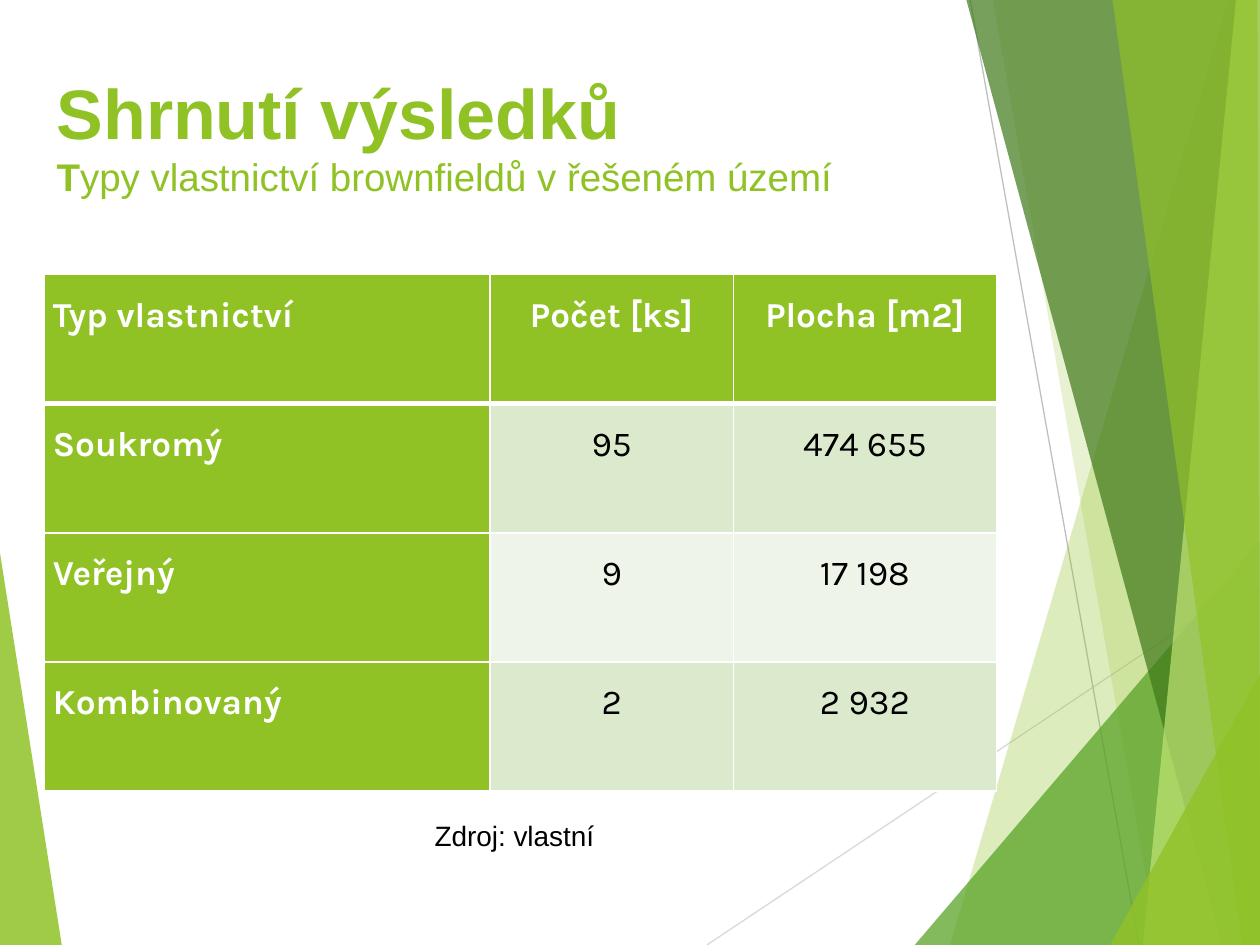
from dataclasses import dataclass

from lxml import etree
from pptx import Presentation
from pptx import util as u
from pptx.dml.color import RGBColor
from pptx.enum import shapes, text
from pptx.oxml import ns

Inches, Pt = u.Inches, u.Pt


@dataclass(frozen=True)
class Theme:
    accent: str = "90C226"
    forest: str = "54A021"
    dark: str = "3F7819"
    lime: str = "C0E474"
    band: str = "DBE9CD"
    band_light: str = "EEF4E8"
    white: str = "FFFFFF"
    black: str = "000000"
    font: str = "Arial"
    table_font: str = "Karla"
    title_size: int = 40
    subtitle_size: int = 22
    table_size: int = 20
    source_size: int = 16


THEME = Theme()

RAYS = [  # colour, opacity in percent, corners
    (THEME.accent, 85, [(0, 4.39), (0.49, 7.5), (0, 7.5)]),
    (THEME.accent, 30, [(9.75, 0), (7.54, 7.5), (10, 7.5), (10, 0)]),
    (THEME.accent, 20, [(7.88, 0), (9.19, 7.5), (10, 7.5), (10, 0)]),
    (THEME.forest, 72, [(7.26, 7.5), (10, 4.29), (10, 7.5)]),
    (THEME.dark, 70, [(7.67, 0), (9.7, 7.5), (10, 7.5), (10, 0)]),
    (THEME.lime, 70, [(9.81, 0), (9.07, 7.5), (10, 7.5), (10, 0)]),
    (THEME.accent, 65, [(8.83, 0), (9.86, 7.5), (10, 7.5), (9.98, 0)]),
    (THEME.accent, 80, [(8.81, 7.5), (10, 5.35), (10, 7.5)]),
]
HAIRLINES = [("D9D9D9", (5.61, 7.5), (10, 4.57)), ("BFBFBF", (7.7, 0), (9.04, 7.5))]
ROWS = [
    ("Typ vlastnictví", "Počet [ks]", "Plocha [m2]"),
    ("Soukromý", "95", "474 655"),
    ("Veřejný", "9", "17 198"),
    ("Kombinovaný", "2", "2 932"),
]
COLUMN_WIDTHS = (3.54, 1.93, 2.09)


def rgb(value):
    return RGBColor.from_string(value)


def style_font(font, name, size, color, bold=False):
    font.name, font.size, font.bold = name, Pt(size), bold
    font.color.rgb = rgb(color)


def add_ray(slide, color, opacity, corners):
    points = [(Inches(x), Inches(y)) for x, y in corners]
    builder = slide.shapes.build_freeform(*points[0])
    builder.add_line_segments(points[1:], close=True)
    shape = builder.convert_to_shape()
    shape.shadow.inherit = False
    shape.line.fill.background()
    shape.fill.solid()
    shape.fill.fore_color.rgb = rgb(color)
    color_element = shape.element.spPr.find(".//" + ns.qn("a:srgbClr"))
    etree.SubElement(color_element, ns.qn("a:alpha"), val=str(opacity * 1000))


def add_hairline(slide, color, start, end):
    line = slide.shapes.add_connector(
        shapes.MSO_CONNECTOR.STRAIGHT, *(Inches(value) for value in start + end))
    line.line.color.rgb = rgb(color)
    line.line.width = Pt(0.75)
    etree.SubElement(line.element.spPr, ns.qn("a:effectLst"))


def add_backdrop(slide):
    left_ray, *right_rays = RAYS
    add_ray(slide, *left_ray)
    for hairline in HAIRLINES:
        add_hairline(slide, *hairline)
    for ray in right_rays:
        add_ray(slide, *ray)


def add_title(slide, left, top, width, height):
    title = slide.shapes.title
    title.element.getparent().append(title.element)  # in front of the backdrop
    title.left, title.top, title.width, title.height = left, top, width, height
    frame = title.text_frame
    frame.word_wrap = True
    frame.auto_size = text.MSO_AUTO_SIZE.NONE
    frame.vertical_anchor = text.MSO_ANCHOR.TOP
    frame.margin_top = Inches(0.11)
    paragraph = frame.paragraphs[0]
    paragraph.alignment = text.PP_ALIGN.LEFT

    def add_run(words, size, bold):
        run = paragraph.add_run()
        run.text = words
        style_font(run.font, THEME.font, size, THEME.accent, bold)

    add_run("Shrnutí výsledků", THEME.title_size, True)
    paragraph.add_line_break()
    add_run("T", THEME.subtitle_size, True)
    add_run("ypy vlastnictví brownfieldů v řešeném území", THEME.subtitle_size, False)


def set_borders(cell, widths):
    """Draw white borders; widths maps L, R, T and B to points."""
    properties = cell._tc.get_or_add_tcPr()
    for side, width in widths.items():
        line = etree.SubElement(properties, ns.qn(f"a:ln{side}"), w=str(Pt(width)))
        fill = etree.SubElement(line, ns.qn("a:solidFill"))
        etree.SubElement(fill, ns.qn("a:srgbClr"), val=THEME.white)


def fill_cell(cell, words, row, column):
    is_heading = row == 0 or column == 0
    set_borders(cell, {"L": 1, "R": 1, "T": 3 if row == 1 else 1, "B": 3 if row == 0 else 1})
    cell.fill.solid()
    band = THEME.band if row % 2 else THEME.band_light
    cell.fill.fore_color.rgb = rgb(THEME.accent if is_heading else band)
    cell.margin_left = cell.margin_right = Inches(0.07)
    cell.margin_top = cell.margin_bottom = 0
    paragraph = cell.text_frame.paragraphs[0]
    paragraph.text = words
    paragraph.alignment = text.PP_ALIGN.CENTER if column else text.PP_ALIGN.LEFT
    paragraph.line_spacing = 1.5
    paragraph.space_after = Pt(6)
    style_font(paragraph.font, THEME.table_font, THEME.table_size,
               THEME.white if is_heading else THEME.black, is_heading)


def add_ownership_table(slide, left, top, width, height):
    table = slide.shapes.add_table(
        len(ROWS), len(COLUMN_WIDTHS), left, top, width, height).table
    table.first_col = True
    for column, share in zip(table.columns, COLUMN_WIDTHS):
        column.width = int(width * share / sum(COLUMN_WIDTHS))
    for row, values in enumerate(ROWS):
        for column, words in enumerate(values):
            fill_cell(table.cell(row, column), words, row, column)


def add_source(slide, left, top, width, height):
    frame = slide.shapes.add_textbox(left, top, width, height).text_frame
    frame.word_wrap = False
    frame.auto_size = text.MSO_AUTO_SIZE.SHAPE_TO_FIT_TEXT
    paragraph = frame.paragraphs[0]
    paragraph.text = "Zdroj: vlastní"
    style_font(paragraph.font, THEME.font, THEME.source_size, THEME.black)


def main():
    presentation = Presentation()
    presentation.slide_width, presentation.slide_height = Inches(10), Inches(7.5)
    slide = presentation.slides.add_slide(presentation.slide_layouts.get_by_name("Title Only"))
    add_backdrop(slide)
    add_title(slide, Inches(0.35), Inches(0.44), Inches(9.46), Inches(1.38))
    add_ownership_table(slide, Inches(0.35), Inches(2.18), Inches(7.56), Inches(4.1))
    add_source(slide, Inches(3.35), Inches(6.45), Inches(1.51), Inches(0.37))
    presentation.save("out.pptx")


if __name__ == "__main__":
    main()
